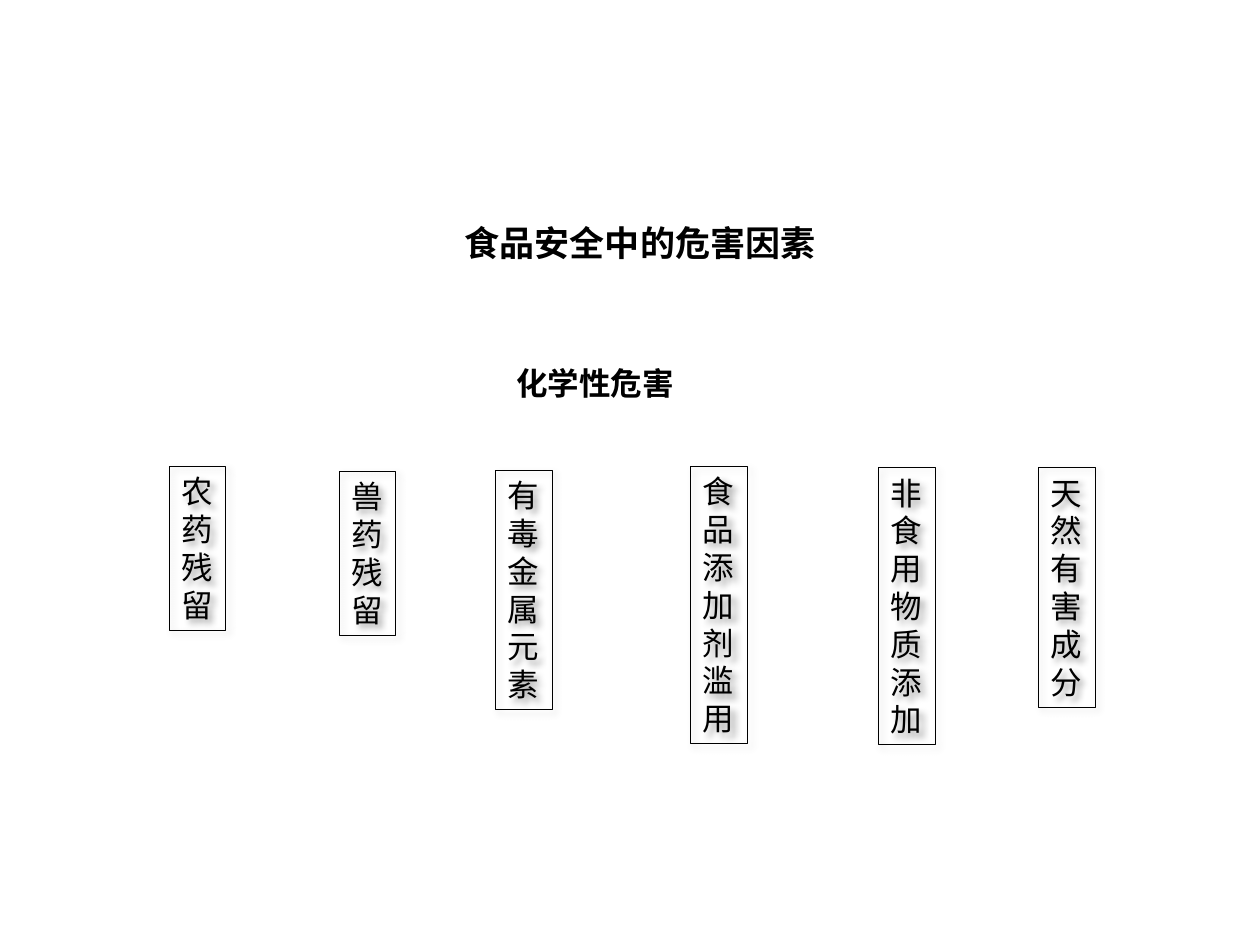
from lxml.etree import SubElement as Sub
from pptx import Presentation
from pptx.dml.color import RGBColor as RGB
from pptx.enum.shapes import MSO_SHAPE as Shape
from pptx.enum.text import MSO_ANCHOR as Anchor, MSO_AUTO_SIZE as Auto, PP_ALIGN as Align
from pptx.oxml.ns import qn
from pptx.util import Inches, Pt

COLORS = {"ink": "000000", "paper": "FFFFFF"}
WIDE, HIGH = 10, 7.5
HEADS = [
    ("食品安全中的危害因素", (0.99, 1.71, 8.18, 0.44), 20, "Arial", Align.CENTER),
    ("化学性危害", (4, 2.84, 1.84, 0.4), 18, "Calibri", Align.LEFT),
]
RISKS = [
    (1.34, 3.7, ["农药残留"]),
    (2.69, 3.74, ["兽药残留"]),
    (3.93, 3.73, ["有毒金属", "元素"]),
    (5.48, 3.7, ["食品添加剂", "滥用"]),
    (6.97, 3.71, ["非食用物质", "添加"]),
    (8.24, 3.71, ["天然有害成分"]),
]
BOX, ROW, PAD = 0.45, 0.3, 0.1


def write(shape, lines, size, face, align=Align.LEFT, bold=False):
    frame = shape.text_frame
    frame.text = "\n".join(lines)
    frame.word_wrap = True
    frame.auto_size = Auto.SHAPE_TO_FIT_TEXT
    frame.vertical_anchor = Anchor.TOP
    for para in frame.paragraphs:
        para.alignment = align
        for run in para.runs:
            font = run.font
            font.size, font.name, font.bold = Pt(size), face, bold
            font.color.rgb = RGB.from_string(COLORS["ink"])


def shade(shape):
    shape.shadow.inherit = False
    effects = shape._element.spPr.find(qn("a:effectLst"))
    outer = Sub(effects, qn("a:outerShdw"), blurRad=str(Pt(4)), dist=str(Pt(3)),
                dir="2700000", algn="tl", rotWithShape="0")
    tint = Sub(outer, qn("a:srgbClr"), val=COLORS["ink"])
    Sub(tint, qn("a:alpha"), val="40000")


def main():
    """Build the slide of chemical hazards in food safety."""
    deck = Presentation()
    deck.slide_width, deck.slide_height = Inches(WIDE), Inches(HIGH)
    slide = deck.slides.add_slide(deck.slide_layouts[6])
    fill = slide.background.fill
    fill.solid()
    fill.fore_color.rgb = RGB.from_string(COLORS["paper"])
    for text, place, size, face, align in HEADS:
        head = slide.shapes.add_textbox(*map(Inches, place))
        write(head, [text], size, face, align, True)
    for left, top, lines in RISKS:
        tall = PAD + ROW * len("".join(lines))
        place = map(Inches, (left, top, BOX, tall))
        box = slide.shapes.add_shape(Shape.RECTANGLE, *place)
        box.fill.background()
        box.line.color.rgb = RGB.from_string(COLORS["ink"])
        box.line.width = Pt(0.25)
        shade(box)
        write(box, lines, 18, "Calibri")
    deck.save("out.pptx")


if __name__ == "__main__":
    main()
